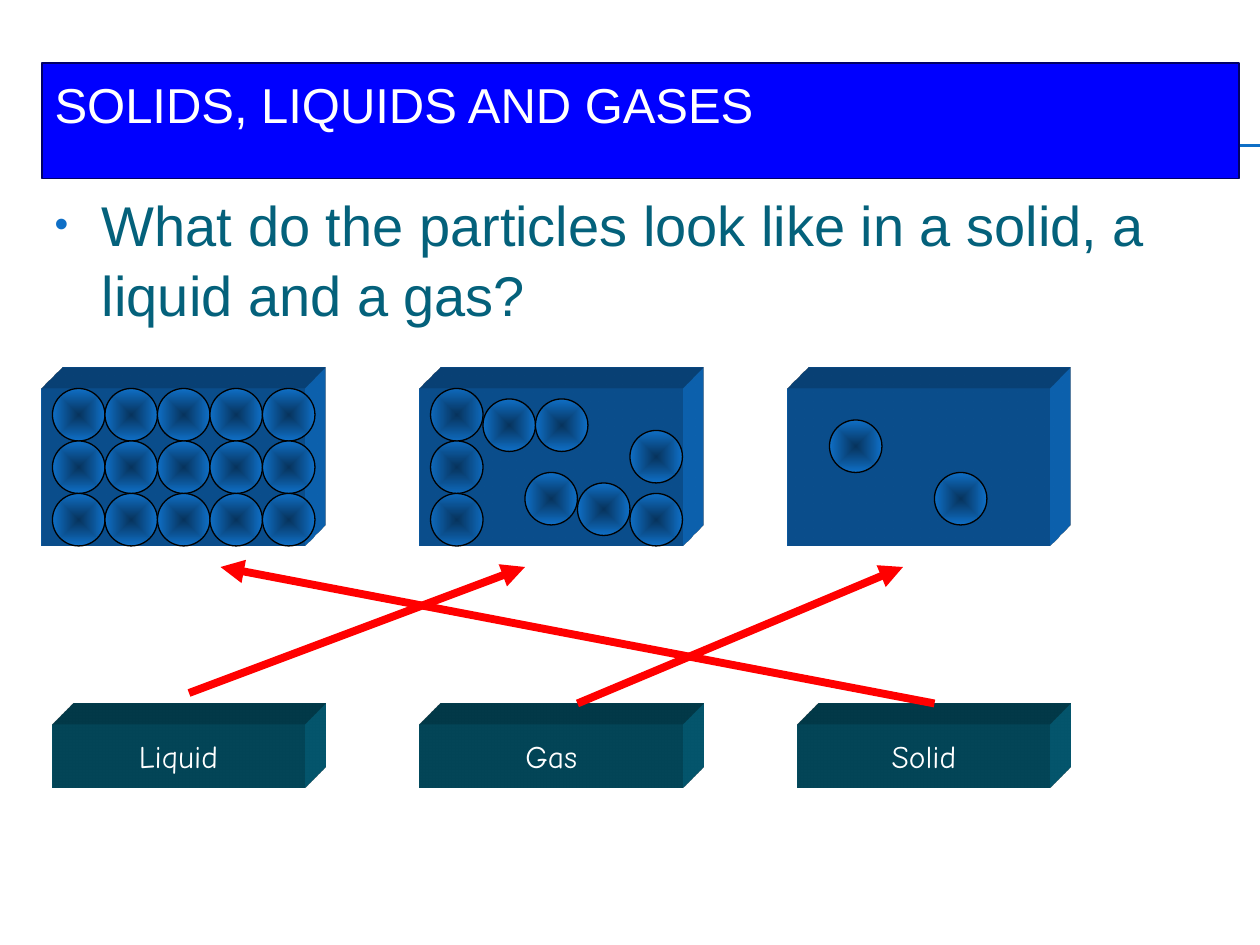
from pptx import Presentation
from pptx.dml.color import RGBColor
from pptx.enum.shapes import MSO_CONNECTOR as CONN, MSO_SHAPE as SHAPE
from pptx.enum.text import MSO_ANCHOR as ANCHOR, MSO_AUTO_SIZE as AUTO, PP_ALIGN as ALIGN
from pptx.oxml import parse_xml
from pptx.oxml.ns import nsdecls
from pptx.util import Emu, Pt

PX = 7620  # 120 px to the inch
BLUE, TEAL, RED, WHITE = "0F6FC6", "04617B", "FF0000", "FFFFFF"
BALL = 50


def px(n):
    return Emu(n * PX)


def rgb(value):
    return RGBColor.from_string(value)


def xml(tag, attrs="", inner=""):
    return parse_xml(f'<a:{tag} {nsdecls("a")} {attrs}>{inner}</a:{tag}>')


class Page:
    """Style and current slide, with one method per kind of element."""

    font, label_font = "Arial", "Comic Neue"

    def __init__(self, slide):
        self.s = slide

    def text(self, sp, words, size, color, font, align, anchor, top=6):
        tf = sp.text_frame
        tf.text = words
        tf.word_wrap, tf.auto_size, tf.vertical_anchor = True, AUTO.NONE, anchor
        tf.margin_top = px(top)
        p = tf.paragraphs[0]
        p.alignment, p.space_before = align, Pt(0)
        f = p.runs[0].font
        f.size, f.name, f.color.rgb = Pt(size), font, rgb(color)
        return p

    def place(self, sp, x, y, w, h):
        sp.left, sp.top, sp.width, sp.height = map(px, (x, y, w, h))

    def title(self, words, *box):
        sp = self.s.shapes.title
        self.place(sp, *box)
        sp.fill.solid()
        sp.fill.fore_color.rgb = rgb("0000FF")
        sp.line.color.rgb, sp.line.width = rgb("000066"), Pt(0.75)
        self.text(sp, words, 28, WHITE, self.font, ALIGN.LEFT, ANCHOR.TOP, 11)

    def bullet(self, words, *box):
        sp = self.s.placeholders[1]
        self.place(sp, *box)
        p = self.text(sp, words, 32, TEAL, self.font, ALIGN.LEFT, ANCHOR.TOP, 8)
        p.line_spacing = 1.05
        pPr = p.runs[0]._r.getparent().get_or_add_pPr()
        pPr.set("marL", str(px(45)))
        pPr.set("indent", str(px(-45)))
        pPr.append(xml("buClr", inner=f'<a:srgbClr val="{BLUE}"/>'))
        pPr.append(xml("buSzPct", 'val="70000"'))
        pPr.append(xml("buFont", f'typeface="{self.font}"'))
        pPr.append(xml("buChar", 'char="•"'))

    def block(self, x, y, w, h, color, words=None):
        """Rectangle extruded towards the top right."""
        sp = self.s.shapes.add_shape(SHAPE.RECTANGLE, *map(px, (x, y, w, h)))
        sp.fill.solid()
        sp.fill.fore_color.rgb = rgb(color)
        sp.line.fill.background()
        sp.shadow.inherit = False
        spPr = sp.element.spPr
        spPr.append(xml("scene3d", inner='<a:camera prst="legacyObliqueTopRight"/>'
                                         '<a:lightRig rig="legacyFlat3" dir="b"/>'))
        spPr.append(xml("sp3d", 'extrusionH="430200" prstMaterial="legacyMatte"',
                        '<a:bevelT w="13500" h="13500" prst="angle"/>'
                        '<a:bevelB w="13500" h="13500" prst="angle"/>'
                        f'<a:extrusionClr><a:srgbClr val="{color}"/></a:extrusionClr>'))
        if words:
            self.text(sp, words, 18, WHITE, self.label_font, ALIGN.CENTER, ANCHOR.MIDDLE)

    def particle(self, x, y, turn=0):
        sp = self.s.shapes.add_shape(SHAPE.OVAL, px(x), px(y), px(BALL), px(BALL))
        sp.rotation = turn
        sp.line.color.rgb, sp.line.width = rgb("000000"), Pt(0.75)
        sp.shadow.inherit = False
        stops = "".join(f'<a:gs pos="{pos}"><a:srgbClr val="{c}"/></a:gs>'
                        for pos, c in ((0, "07335C"), (100000, BLUE)))
        grad = xml("gradFill", 'rotWithShape="0"',
                   f'<a:gsLst>{stops}</a:gsLst><a:path path="shape">'
                   '<a:fillToRect l="50000" t="50000" r="50000" b="50000"/></a:path>')
        sp.element.spPr.insert(2, grad)

    def line(self, x1, y1, x2, y2, color, width):
        c = self.s.shapes.add_connector(CONN.STRAIGHT, *map(px, (x1, y1, x2, y2)))
        c.line.color.rgb, c.line.width = rgb(color), Pt(width)
        c.element.spPr.append(xml("effectLst"))
        return c

    def arrow(self, *ends):
        c = self.line(*ends, RED, 4.5)
        c.line._get_or_add_ln().append(xml("tailEnd", 'type="triangle"'))

    def rule(self, y):
        """Thin line behind everything else."""
        c = self.line(67, y, 1200, y, BLUE, 0.75)
        c.element.getparent().insert(2, c.element)


def main():
    prs = Presentation()
    prs.slide_width, prs.slide_height = px(1200), px(900)
    page = Page(prs.slides.add_slide(prs.slide_layouts[1]))

    # Heading and question
    for y in (138, 139):
        page.rule(y)
    page.title("SOLIDS, LIQUIDS AND GASES", 40, 60, 1140, 110)
    page.bullet("What do the particles look like in a solid, a liquid and a gas?",
                40, 170, 1140, 150)

    # Gas box and the name blocks
    page.block(750, 370, 250, 150, BLUE)
    for words, x, w in (("Liquid", 50, 240), ("Gas", 400, 250), ("Solid", 760, 240)):
        page.block(x, 690, w, 60, TEAL, words)
    for x, y in ((790, 400), (890, 450)):
        page.particle(x, y)

    # Arrows from each name to its box
    for ends in ((180, 660, 500, 540), (550, 670, 860, 540), (890, 670, 210, 540)):
        page.arrow(*ends)

    # Solid: a packed grid
    page.block(40, 370, 250, 150, BLUE)
    for col in range(5):
        for row in range(3):
            page.particle(50 + col * BALL, 370 + row * BALL)

    # Liquid: a column and loose particles
    page.block(400, 370, 250, 150, BLUE)
    for row in range(3):
        page.particle(410, 370 + row * BALL, 83.6)
    for x, y in ((460, 380), (510, 380), (500, 450), (550, 460), (600, 470), (600, 410)):
        page.particle(x, y)

    prs.save("out.pptx")


if __name__ == "__main__":
    main()
